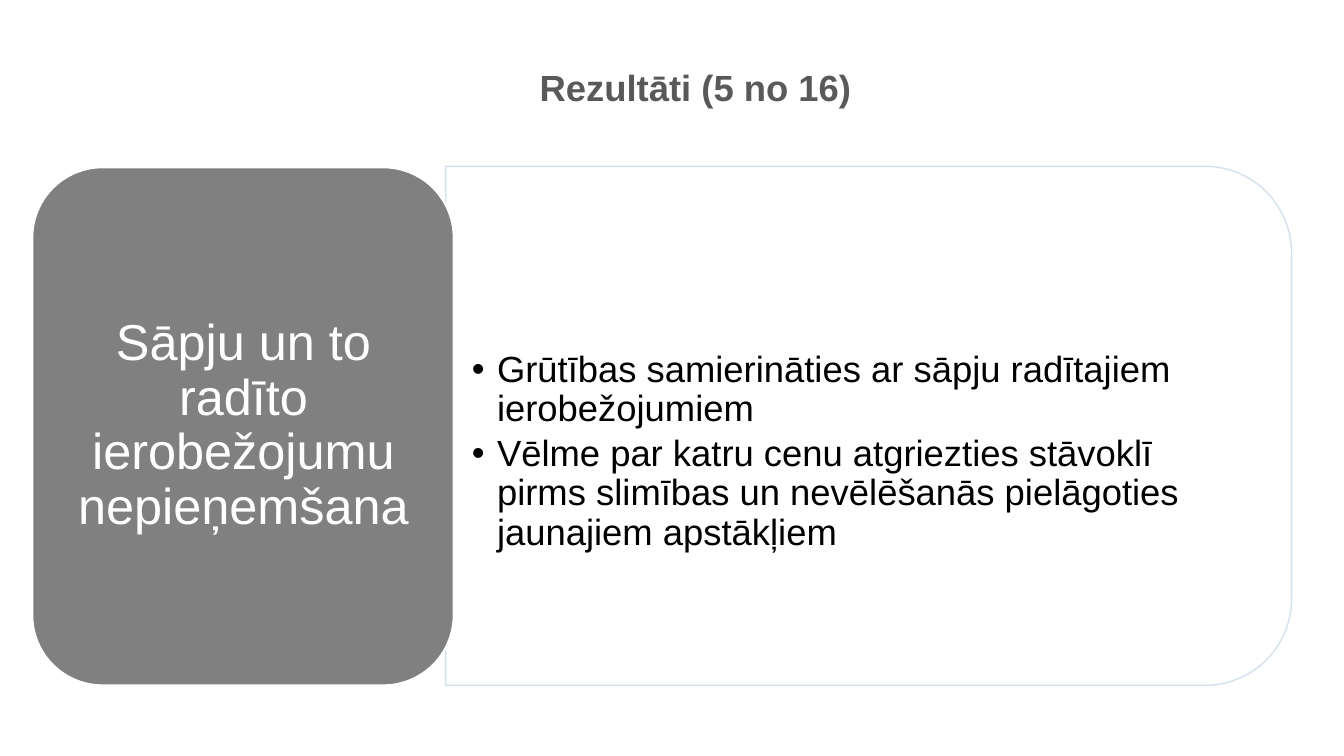
from lxml import etree
from pptx import Presentation
from pptx.dml.color import RGBColor
from pptx.enum import shapes, text
from pptx.oxml import ns
from pptx.util import Inches, Pt

WHITE = RGBColor(0xFF, 0xFF, 0xFF)
BLACK = RGBColor(0x00, 0x00, 0x00)
GRAY = RGBColor(0x80, 0x80, 0x80)
TITLE_GRAY = RGBColor(0x58, 0x59, 0x5B)
PALE_BLUE = RGBColor(0xD2, 0xDE, 0xEF)

DIFFICULTIES = [
    "Grūtības samierināties ar sāpju radītajiem ierobežojumiem",
    "Vēlme par katru cenu atgriezties stāvoklī pirms slimības un "
    "nevēlēšanās pielāgoties jaunajiem apstākļiem",
]


def apply_format(target, values):
    for name, value in values.items():
        setattr(target, name, value)


def set_opacity(panel, percent):
    for color in panel._element.spPr.iter(ns.qn("a:srgbClr")):
        etree.SubElement(color, ns.qn("a:alpha"), val=str(percent * 1000))


def add_bullet(para, indent):
    properties = para._p.get_or_add_pPr()
    properties.set("marL", str(indent))
    properties.set("indent", str(-indent))
    etree.SubElement(properties, ns.qn("a:buFont"), typeface="Arial")
    etree.SubElement(properties, ns.qn("a:buChar"), char="•")


def add_panel(page, kind, place, fill, line, width, rotation=0, opacity=100):
    panel = page.shapes.add_shape(kind, *map(Inches, place))
    panel.shadow.inherit = False
    panel.rotation = rotation
    panel.fill.solid()
    panel.fill.fore_color.rgb = fill
    panel.line.color.rgb = line
    panel.line.width = Pt(width)
    if opacity < 100:
        set_opacity(panel, opacity)


def add_text(page, place, lines, size, color, margins=(0, 0), bold=False,
             anchor=text.MSO_ANCHOR.MIDDLE, align=text.PP_ALIGN.CENTER,
             bullet_indent=None, gap=0):
    box = page.shapes.add_textbox(*map(Inches, place))
    side, edge = map(Inches, margins)
    frame = box.text_frame
    apply_format(frame, {
        "word_wrap": True, "vertical_anchor": anchor,
        "margin_left": side, "margin_right": side,
        "margin_top": edge, "margin_bottom": edge,
    })
    for index, line in enumerate(lines):
        para = frame.add_paragraph() if index else frame.paragraphs[0]
        apply_format(para, {"alignment": align, "line_spacing": 0.9,
                            "space_after": Pt(gap)})
        if bullet_indent:
            add_bullet(para, Inches(bullet_indent))
        span = para.add_run()
        span.text = line
        apply_format(span.font, {"name": "Arial", "size": Pt(size), "bold": bold})
        span.font.color.rgb = color


def main():
    deck = Presentation()
    apply_format(deck, {"slide_width": Inches(13.33), "slide_height": Inches(7.5)})
    page = deck.slides.add_slide(deck.slide_layouts[6])

    add_text(page, (1.15, 0.7, 11.5, 1.13), ["Rezultāti (5 no 16)"], 26, TITLE_GRAY,
             bold=True, anchor=text.MSO_ANCHOR.TOP)
    add_panel(page, shapes.MSO_SHAPE.ROUND_2_SAME_RECTANGLE, (6.04, 0.03, 5.15, 8.39),
              WHITE, PALE_BLUE, 1, rotation=90, opacity=90)
    add_text(page, (4.41, 2.16, 8.14, 4.65), DIFFICULTIES, 26, BLACK, (0.27, 0.14),
             align=text.PP_ALIGN.LEFT, bullet_indent=0.25, gap=4)
    add_panel(page, shapes.MSO_SHAPE.ROUNDED_RECTANGLE, (0.32, 1.66, 4.18, 5.14),
              GRAY, WHITE, 1.5)
    add_text(page, (0.53, 1.86, 3.77, 4.74),
             ["Sāpju un to radīto ierobežojumu nepieņemšana"], 36, WHITE, (0.15, 0.07))
    deck.save("out.pptx")


if __name__ == "__main__":
    main()
